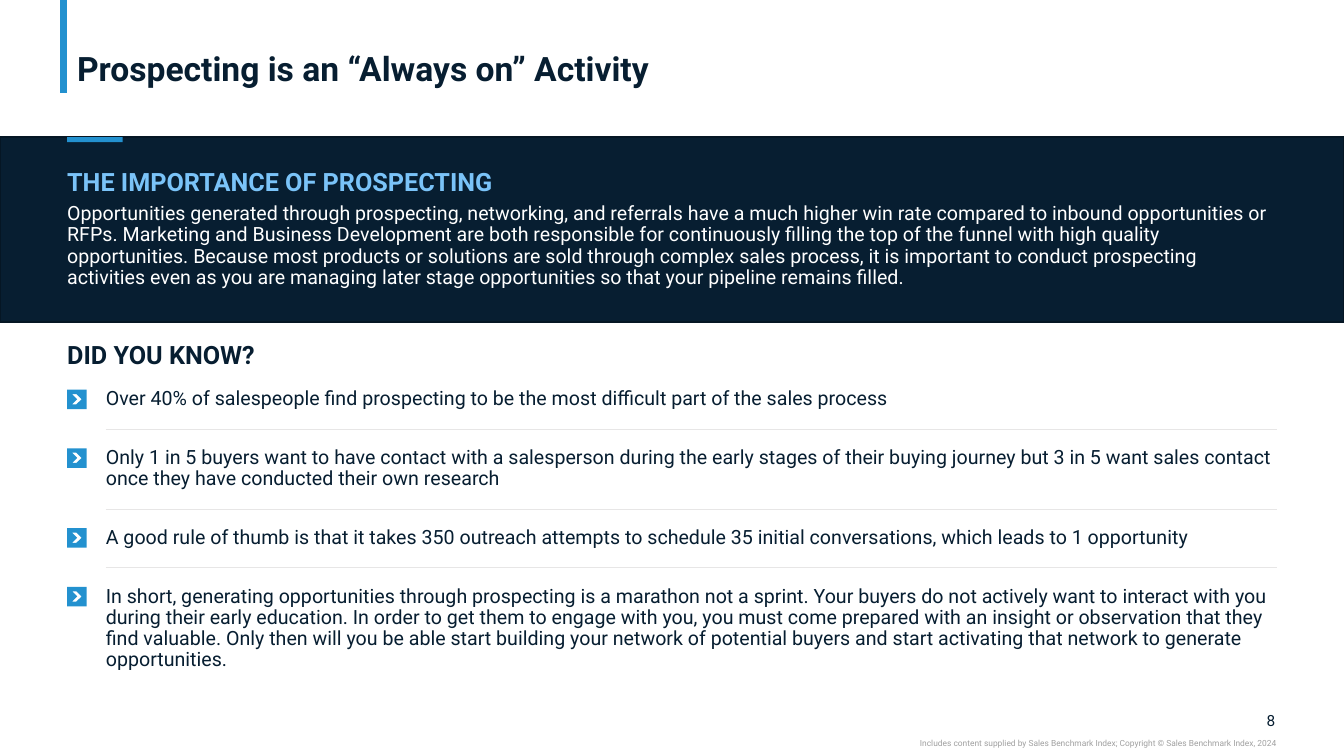
from lxml import etree
from pptx import Presentation
from pptx.dml.color import RGBColor
from pptx.enum.shapes import MSO_CONNECTOR, MSO_SHAPE
from pptx.enum.text import MSO_ANCHOR, PP_ALIGN
from pptx.oxml.ns import qn
from pptx.util import Pt

STRAIGHT = MSO_CONNECTOR.STRAIGHT
RECTANGLE = MSO_SHAPE.RECTANGLE
TOP, MIDDLE, BOTTOM = MSO_ANCHOR.TOP, MSO_ANCHOR.MIDDLE, MSO_ANCHOR.BOTTOM
LEFT, RIGHT = PP_ALIGN.LEFT, PP_ALIGN.RIGHT

FONT = "Roboto"
NAVY, BLUE, SKY, WHITE = "071E31", "2391CF", "7AC3F8", "FFFFFF"
BAND_EDGE, RULE_GREY, FOOTER_GREY = "051624", "E7E6E6", "A0A0A0"

SLIDE_WIDTH, SLIDE_HEIGHT = 960, 540
MARGIN, CONTENT_WIDTH = 48, 864
FACT_LEFT = 75.6
FACT_RIGHT = 912.2
FACTS_TOP, FACT_LINE, FACT_GAP, RULE_DROP = 277.9, 15.12, 26.8, 13.6
ICON_SIZE = 14
ICON_SQUARE = [(0, 0), (0, ICON_SIZE), (ICON_SIZE, ICON_SIZE), (ICON_SIZE, 0)]
ICON_CHEVRON = [(3.5, 3.2), (6.6, 3.2), (10.4, 6.9), (6.6, 10.5), (3.5, 10.5), (7.2, 6.9)]

IMPORTANCE = (
    "Opportunities generated through prospecting, networking, and referrals have a much higher "
    "win rate compared to inbound opportunities or RFPs. Marketing and Business Development are "
    "both responsible for continuously filling the top of the funnel with high quality "
    "opportunities. Because most products or solutions are sold through complex sales process, "
    "it is important to conduct prospecting activities even as you are managing later stage "
    "opportunities so that your pipeline remains filled."
)
FACTS = [
    ("Over 40% of salespeople find prospecting to be the most difficult part of the sales process", 1),
    ("Only 1 in 5 buyers want to have contact with a salesperson during the early stages of their "
     "buying journey but 3 in 5 want sales contact once they have conducted their own research", 2),
    ("A good rule of thumb is that it takes 350 outreach attempts to schedule 35 initial "
     "conversations, which leads to 1 opportunity", 1),
    ("In short, generating opportunities through prospecting is a marathon not a sprint. Your "
     "buyers do not actively want to interact with you during their early education. In order to "
     "get them to engage with you, you must come prepared with an insight or observation that "
     "they find valuable. Only then will you be able start building your network of potential "
     "buyers and start activating that network to generate opportunities.", 4),
]
FOOTER = "Includes content supplied by Sales Benchmark Index; Copyright © Sales Benchmark Index, 2024"


def rgb(hex_color):
    return RGBColor.from_string(hex_color)


def add_text(slide, text, left, top, width, height, size, color=NAVY, bold=False,
             anchor=MIDDLE, align=LEFT, spacing=0.9, side_inset=0):
    box = slide.shapes.add_textbox(Pt(left), Pt(top), Pt(width), Pt(height))
    frame = box.text_frame
    frame.word_wrap = True
    frame.vertical_anchor = anchor
    frame.margin_left = frame.margin_right = Pt(side_inset)
    frame.margin_top = frame.margin_bottom = 0
    paragraph = frame.paragraphs[0]
    paragraph.text = text
    paragraph.alignment = align
    paragraph.line_spacing = spacing
    paragraph.font.name = FONT
    paragraph.font.size = Pt(size)
    paragraph.font.bold = bold
    paragraph.font.color.rgb = rgb(color)


def paint(shape, fill, edge=None):
    shape.shadow.inherit = False
    shape.fill.solid()
    shape.fill.fore_color.rgb = rgb(fill)
    if edge:
        shape.line.color.rgb = rgb(edge)
        shape.line.width = Pt(1)
    else:
        shape.line.fill.background()


def add_block(slide, left, top, width, height, fill, edge=None):
    block = slide.shapes.add_shape(RECTANGLE, Pt(left), Pt(top), Pt(width), Pt(height))
    paint(block, fill, edge)


def add_rule(slide, x1, y1, x2, y2, color, weight):
    rule = slide.shapes.add_connector(STRAIGHT, Pt(x1), Pt(y1), Pt(x2), Pt(y2))
    rule.line.color.rgb = rgb(color)
    rule.line.width = Pt(weight)
    etree.SubElement(rule._element.spPr, qn("a:effectLst"))


def add_chevron_icon(slide, left, top):
    add_block(slide, left + 1.5, top + 1.5, 11, 11, WHITE)
    square, chevron = (
        [(Pt(left + x), Pt(top + y)) for x, y in outline]
        for outline in (ICON_SQUARE, ICON_CHEVRON)
    )
    builder = slide.shapes.build_freeform(*square[0])
    builder.add_line_segments(square[1:], close=True)
    builder.move_to(*chevron[0])
    builder.add_line_segments(chevron[1:], close=True)
    paint(builder.convert_to_shape(), BLUE)


def add_facts(slide):
    top = FACTS_TOP
    for number, (fact, lines) in enumerate(FACTS, start=1):
        height = lines * FACT_LINE
        add_text(slide, fact, FACT_LEFT, top, FACT_RIGHT - FACT_LEFT, height, 14, anchor=TOP)
        add_chevron_icon(slide, MARGIN, top + 0.4)
        if number < len(FACTS):
            rule_y = top + height + RULE_DROP
            add_rule(slide, FACT_LEFT, rule_y, FACT_RIGHT, rule_y, RULE_GREY, 0.5)
        top += height + FACT_GAP


def main():
    deck = Presentation()
    deck.slide_width, deck.slide_height = Pt(SLIDE_WIDTH), Pt(SLIDE_HEIGHT)
    slide = deck.slides.add_slide(deck.slide_layouts[6])

    add_rule(slide, 45.4, 0, 45.4, 66.3, BLUE, 5)
    add_text(slide, "Prospecting is an “Always on” Activity", MARGIN, 2.9, CONTENT_WIDTH, 60.5,
             24, bold=True, anchor=BOTTOM, side_inset=7.2)
    add_block(slide, 0, 97.9, SLIDE_WIDTH, 132, NAVY, BAND_EDGE)
    add_block(slide, MARGIN, 97.9, 39.6, 3.6, BLUE)
    add_text(slide, "THE IMPORTANCE OF PROSPECTING", MARGIN, 121, CONTENT_WIDTH, 19.4,
             18, SKY, bold=True)
    add_text(slide, IMPORTANCE, MARGIN, 145.4, CONTENT_WIDTH, 61, 14, WHITE)
    add_text(slide, "DID YOU KNOW?", MARGIN, 244.8, CONTENT_WIDTH, 19.4, 18, bold=True)
    add_facts(slide)
    add_text(slide, "8", 887, 507.6, 24, 13.7, 11, align=RIGHT, spacing=1.0)
    add_text(slide, FOOTER, 540, 527, 371.5, 7.2, 6, FOOTER_GREY,
             anchor=TOP, align=RIGHT, spacing=1.0)

    deck.save("out.pptx")


if __name__ == "__main__":
    main()
